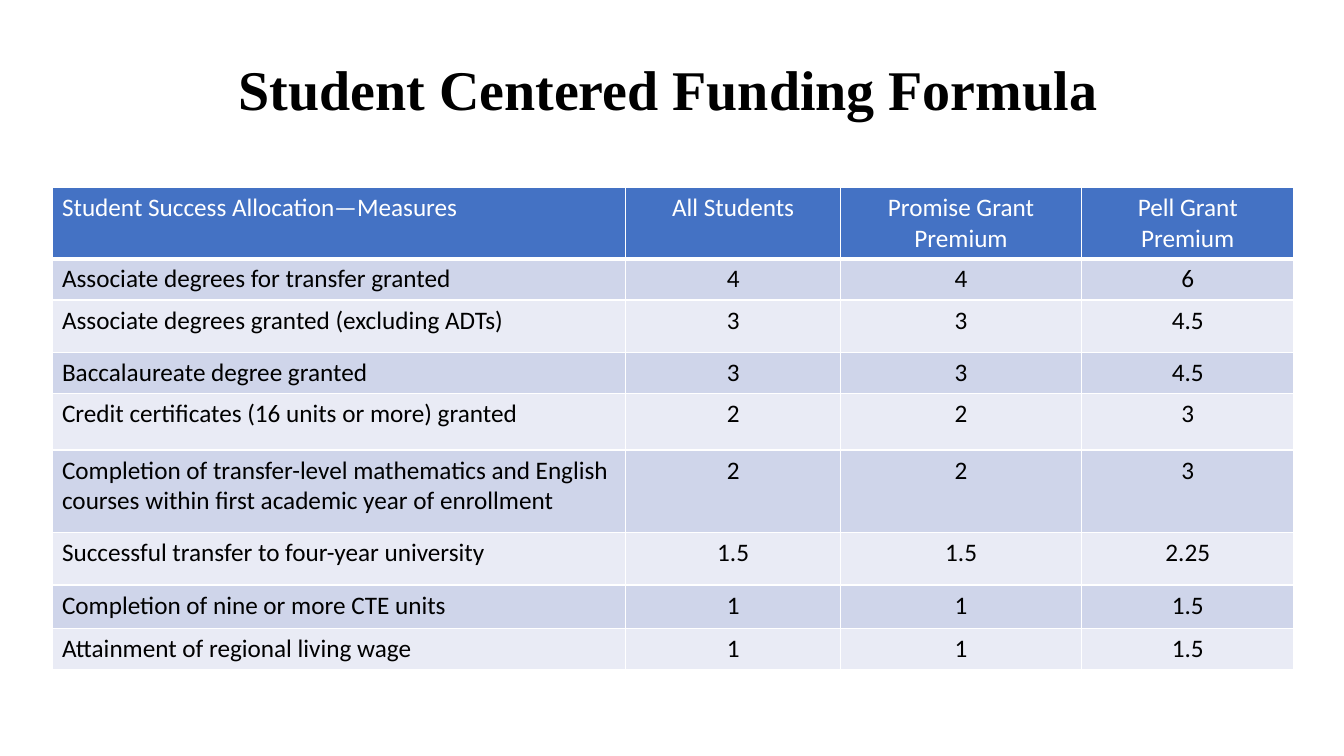
import pptx
import pptx.dml.color
import pptx.enum.text
import pptx.oxml
import pptx.oxml.ns
import pptx.util
from pptx.util import Cm

ALIGN = pptx.enum.text.PP_ALIGN
ANCHOR = pptx.enum.text.MSO_ANCHOR
WHITE, BLACK, HEADER_BLUE = "FFFFFF", "000000", "4472C4"
BAND_FILLS = ("CFD5EA", "E9EBF5")

HEADINGS = ("Student Success Allocation—Measures", "All Students",
            "Promise Grant Premium", "Pell Grant Premium")
# Each measure: name, points for the three student groups, row height in cm
MEASURES = (
    ("Associate degrees for transfer granted", "4", "4", "6", 1.04),
    ("Associate degrees granted (excluding ADTs)", "3", "3", "4.5", 1.32),
    ("Baccalaureate degree granted", "3", "3", "4.5", 1.04),
    ("Credit certificates (16 units or more) granted", "2", "2", "3", 1.42),
    ("Completion of transfer-level mathematics and English courses "
     "within first academic year of enrollment", "2", "2", "3", 2.08),
    ("Successful transfer to four-year university", "1.5", "1.5", "2.25", 1.32),
    ("Completion of nine or more CTE units", "1", "1", "1.5", 1.1),
    ("Attainment of regional living wage", "1", "1", "1.5", 1.04),
)
HEADER_HEIGHT = 1.8
COLUMN_SHARES = (0.462, 0.173, 0.194, 0.171)


def color(hex_string):
    return pptx.dml.color.RGBColor.from_string(hex_string)


def write_text(frame, text, *, size=18, font="Calibri", fill=BLACK, bold=False,
               align=ALIGN.LEFT, line_spacing=1.0):
    frame.word_wrap = True
    paragraph = frame.paragraphs[0]
    paragraph.alignment = align
    paragraph.line_spacing = line_spacing
    run = paragraph.add_run()
    run.text = text
    run.font.size = pptx.util.Pt(size)
    run.font.name = font
    run.font.bold = bold
    run.font.color.rgb = color(fill)


def set_borders(cell, bottom_width):
    """Draw white borders, 1 pt wide except at the bottom."""
    properties = cell._tc.get_or_add_tcPr()
    widths = {"lnL": 1, "lnR": 1, "lnT": 1, "lnB": bottom_width}
    for position, (side, width) in enumerate(widths.items()):
        line = pptx.oxml.parse_xml(
            f'<a:{side} {pptx.oxml.ns.nsdecls("a")} w="{pptx.util.Pt(width)}">'
            f'<a:solidFill><a:srgbClr val="{WHITE}"/></a:solidFill></a:{side}>')
        properties.insert(position, line)


def add_title(slide, left, top, width, height):
    frame = slide.shapes.add_textbox(left, top, width, height).text_frame
    frame.vertical_anchor = ANCHOR.MIDDLE
    write_text(frame, "Student Centered Funding Formula", size=40, bold=True,
               font="Times New Roman", align=ALIGN.CENTER, line_spacing=0.9)


def add_measures_table(slide, left, top, width):
    heights = [HEADER_HEIGHT] + [measure[-1] for measure in MEASURES]
    rows = [HEADINGS] + [measure[:-1] for measure in MEASURES]
    table = slide.shapes.add_table(len(rows), len(HEADINGS), left, top, width,
                                   Cm(sum(heights))).table
    for column, share in zip(table.columns, COLUMN_SHARES):
        column.width = int(width * share)
    for row_index, (texts, height) in enumerate(zip(rows, heights)):
        is_header = row_index == 0
        table.rows[row_index].height = Cm(height)
        for column_index, text in enumerate(texts):
            cell = table.cell(row_index, column_index)
            cell.fill.solid()
            cell.fill.fore_color.rgb = color(
                HEADER_BLUE if is_header else BAND_FILLS[(row_index - 1) % 2])
            set_borders(cell, bottom_width=3 if is_header else 1)
            write_text(cell.text_frame, text,
                       fill=WHITE if is_header else BLACK,
                       align=ALIGN.CENTER if column_index else ALIGN.LEFT)


def main():
    presentation = pptx.Presentation()
    presentation.slide_width = Cm(33.87)
    presentation.slide_height = Cm(19.05)
    slide = presentation.slides.add_slide(presentation.slide_layouts[6])
    add_title(slide, Cm(4.55), Cm(1.07), Cm(24.56), Cm(2.54))
    add_measures_table(slide, Cm(1.31), Cm(4.72), Cm(31.3))
    presentation.save("out.pptx")


if __name__ == "__main__":
    main()
